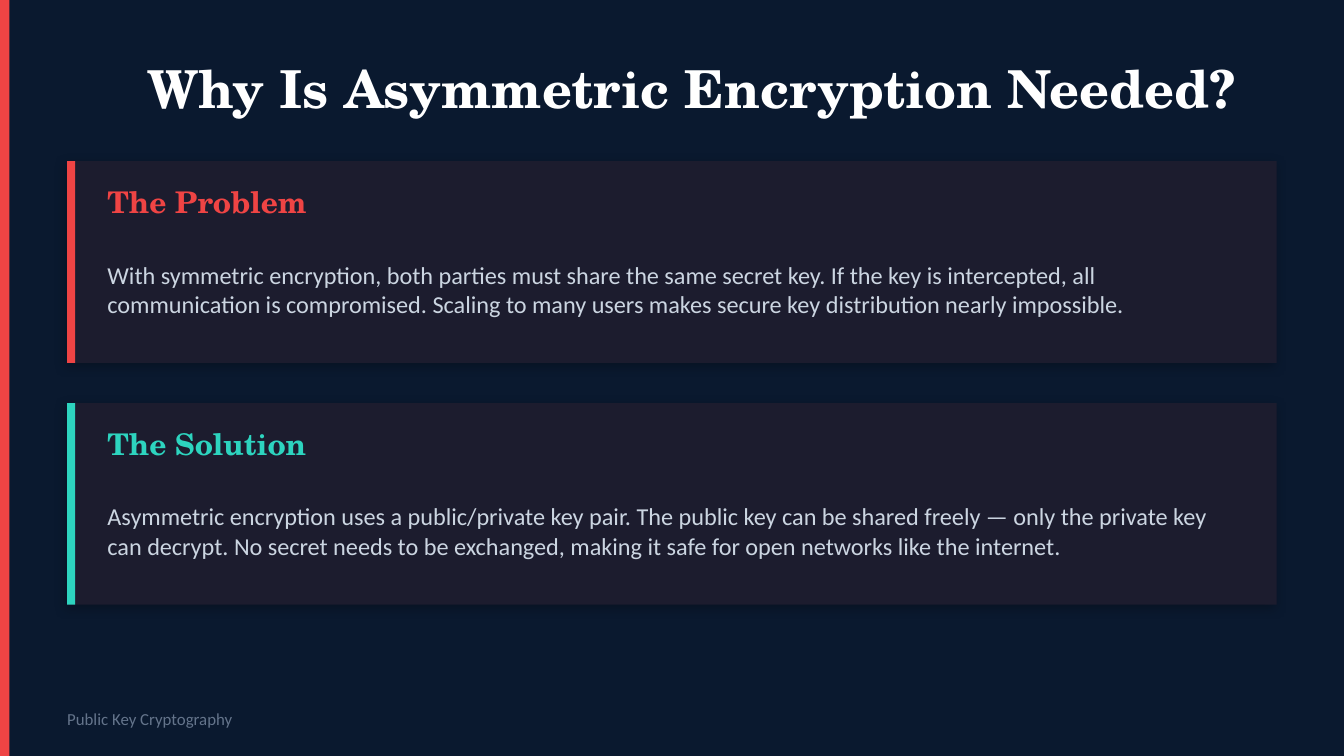
from dataclasses import dataclass

from lxml.etree import SubElement
from pptx import Presentation
from pptx.dml.color import RGBColor
from pptx.enum.shapes import MSO_SHAPE as Shp
from pptx.enum.text import MSO_ANCHOR as Anchor
from pptx.oxml.ns import qn
from pptx.util import Emu, Pt

PX = 4572  # EMU per px, 200 px to the inch
WIDTH, HEIGHT = 2000, 1125
SERIF, SANS = "TeX Gyre Schola", "Calibri"
RED, TEAL = "EF4444", "2DD4BF"


@dataclass
class Card:
    top: int
    accent: str
    heading: str
    body: str


def px(n: int) -> Emu:
    return Emu(n * PX)


def rgb(value: str) -> RGBColor:
    return RGBColor.from_string(value)


def add_rect(x: int, y: int, w: int, h: int, color: str):
    s = slide.shapes.add_shape(Shp.RECTANGLE, px(x), px(y), px(w), px(h))
    s.shadow.inherit = False
    s.fill.solid()
    s.fill.fore_color.rgb = rgb(color)
    s.line.fill.background()
    return s


def add_shadow(s) -> None:
    effects = s._element.spPr.find(qn("a:effectLst"))
    shadow = SubElement(effects, qn("a:outerShdw"), blurRad=str(Pt(6)),
                        dist=str(Pt(2)), dir=str(135 * 60000),
                        algn="bl", rotWithShape="0")
    color = SubElement(shadow, qn("a:srgbClr"), val="000000")
    SubElement(color, qn("a:alpha"), val="25000")


def add_text(x: int, y: int, w: int, h: int, text: str, color: str, **font) -> None:
    tf = slide.shapes.add_textbox(px(x), px(y), px(w), px(h)).text_frame
    frame = dict(word_wrap=True, vertical_anchor=Anchor.MIDDLE, margin_left=0,
                 margin_right=0, margin_top=0, margin_bottom=0)
    for name, value in frame.items():
        setattr(tf, name, value)
    r = tf.paragraphs[0].add_run()
    r.text = text
    for name, value in font.items():
        setattr(r.font, name, value)
    r.font.color.rgb = rgb(color)


def add_card(card: Card) -> None:
    add_shadow(add_rect(100, card.top, 1800, 300, "1C1C2E"))
    add_rect(100, card.top, 12, 300, card.accent)
    add_text(160, card.top + 20, 600, 80, card.heading, card.accent,
             name=SERIF, size=Pt(16), bold=True)
    add_text(160, card.top + 110, 1680, 160, card.body, "CBD5E1",
             name=SANS, size=Pt(13))


CARDS = [
    Card(240, RED, "The Problem",
         "With symmetric encryption, both parties must share the same secret key. "
         "If the key is intercepted, all communication is compromised. "
         "Scaling to many users makes secure key distribution nearly impossible."),
    Card(600, TEAL, "The Solution",
         "Asymmetric encryption uses a public/private key pair. "
         "The public key can be shared freely — only the private key can decrypt. "
         "No secret needs to be exchanged, making it safe for open networks "
         "like the internet."),
]

prs = Presentation()
prs.slide_width, prs.slide_height = px(WIDTH), px(HEIGHT)
slide = prs.slides.add_slide(prs.slide_layouts[6])
slide.background.fill.solid()
slide.background.fill.fore_color.rgb = rgb("0A192F")

# Edge bar and title
add_rect(0, 0, 14, HEIGHT, RED)
add_text(220, 60, 1680, 140, "Why Is Asymmetric Encryption Needed?", "FFFFFF",
         name=SERIF, size=Pt(28), bold=True)

# Problem and solution
for card in CARDS:
    add_card(card)

# Footer
add_text(100, 1040, 1000, 60, "Public Key Cryptography", "64748B",
         name=SANS, size=Pt(9))

prs.save("out.pptx")
